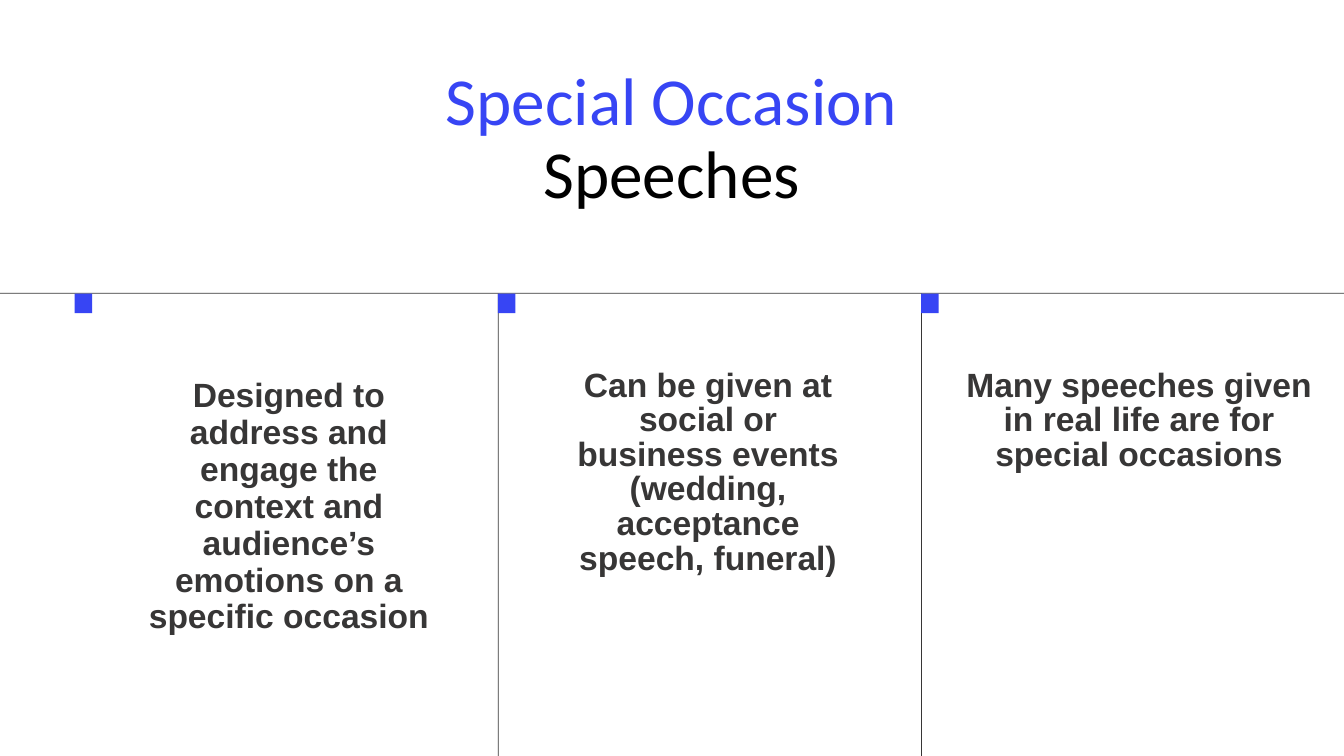
import pptx
import pptx.dml.color
import pptx.enum.shapes
import pptx.enum.text
import pptx.util
from pptx.util import Cm

BLUE, GREY, BLACK = "3745F4", "373636", "000000"


def colour(value):
    return pptx.dml.color.RGBColor.from_string(value)


class SlideBuilder:
    def __init__(self, slide):
        self.slide = slide

    def block(self, left, top, width, height, fill):
        block = self.slide.shapes.add_shape(
            pptx.enum.shapes.MSO_SHAPE.RECTANGLE,
            Cm(left), Cm(top), Cm(width), Cm(height))
        block.shadow.inherit = False
        block.fill.solid()
        block.fill.fore_color.rgb = colour(fill)
        block.line.fill.background()

    def text(self, left, top, width, height, lines, size, spacing, font,
             bold=False, indent=0):
        """Add a centred paragraph; lines holds (wording, colour) pairs."""
        box = self.slide.shapes.add_textbox(
            Cm(left), Cm(top), Cm(width), Cm(height))
        frame = box.text_frame
        frame.word_wrap = True
        frame.auto_size = pptx.enum.text.MSO_AUTO_SIZE.SHAPE_TO_FIT_TEXT
        frame.margin_left = frame.margin_right = 0
        frame.margin_top = frame.margin_bottom = 0
        paragraph = frame.paragraphs[0]
        paragraph.alignment = pptx.enum.text.PP_ALIGN.CENTER
        paragraph.line_spacing = pptx.util.Pt(spacing)
        if indent:
            paragraph.level = 1
            properties = paragraph._p.get_or_add_pPr()
            properties.set("marL", str(Cm(indent)))
            properties.set("indent", "0")
        for number, (wording, ink) in enumerate(lines):
            if number:
                paragraph.add_line_break()
            run = paragraph.add_run()
            run.text = wording
            run.font.name = font
            run.font.size = pptx.util.Pt(size)
            run.font.bold = bold
            run.font.color.rgb = colour(ink)


def main():
    deck = pptx.Presentation()
    deck.slide_width, deck.slide_height = Cm(50.8), Cm(28.575)
    builder = SlideBuilder(deck.slides.add_slide(deck.slide_layouts[6]))

    builder.text(9.73, 2.44, 31.32, 5.64,
                 [("Special Occasion", BLUE), ("Speeches", BLACK)],
                 72, 79.2, "Calibri")

    rule, columns_top = 0.03, 11.1
    column_edges = [2.82 + 16 * column for column in range(3)]
    builder.block(0, columns_top - rule, 50.8, rule, GREY)
    for edge in column_edges[1:]:
        builder.block(edge, columns_top, rule, 17.47, GREY)
    for edge in column_edges:
        builder.block(edge, columns_top, 0.66, 0.74, BLUE)

    points = [
        (4.34, 14.25, 12.09, 12.83, 39.6, 1.07,
         "Designed to address and engage the context and audience’s "
         "emotions on a specific occasion"),
        (21.67, 13.97, 10.19, 10.54, 37, 0,
         "Can be given at social or business events "
         "(wedding, acceptance speech, funeral)"),
        (36.4, 13.97, 13.31, 6.58, 37, 0,
         "Many speeches given in real life are for special occasions"),
    ]
    for left, top, width, height, spacing, indent, wording in points:
        builder.text(left, top, width, height, [(wording, GREY)],
                     36, spacing, "Arial", bold=True, indent=indent)

    deck.save("out.pptx")


if __name__ == "__main__":
    main()
